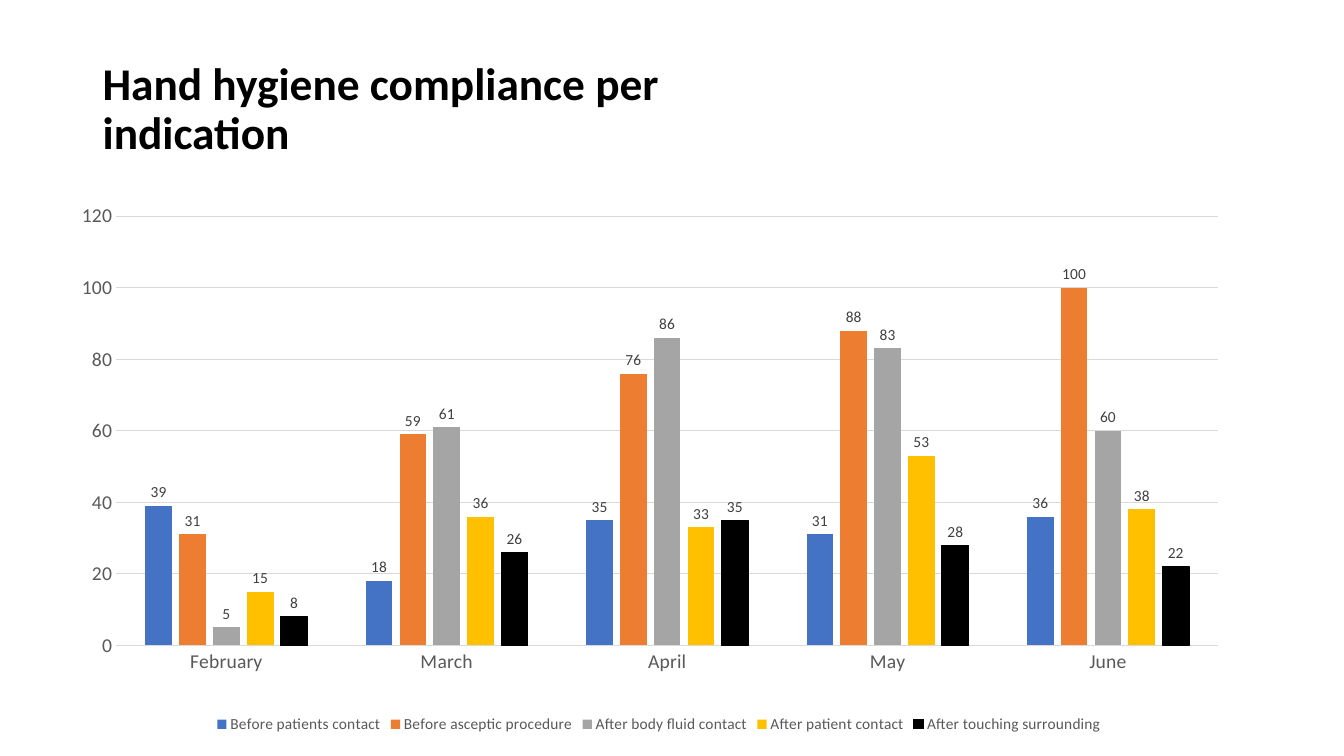
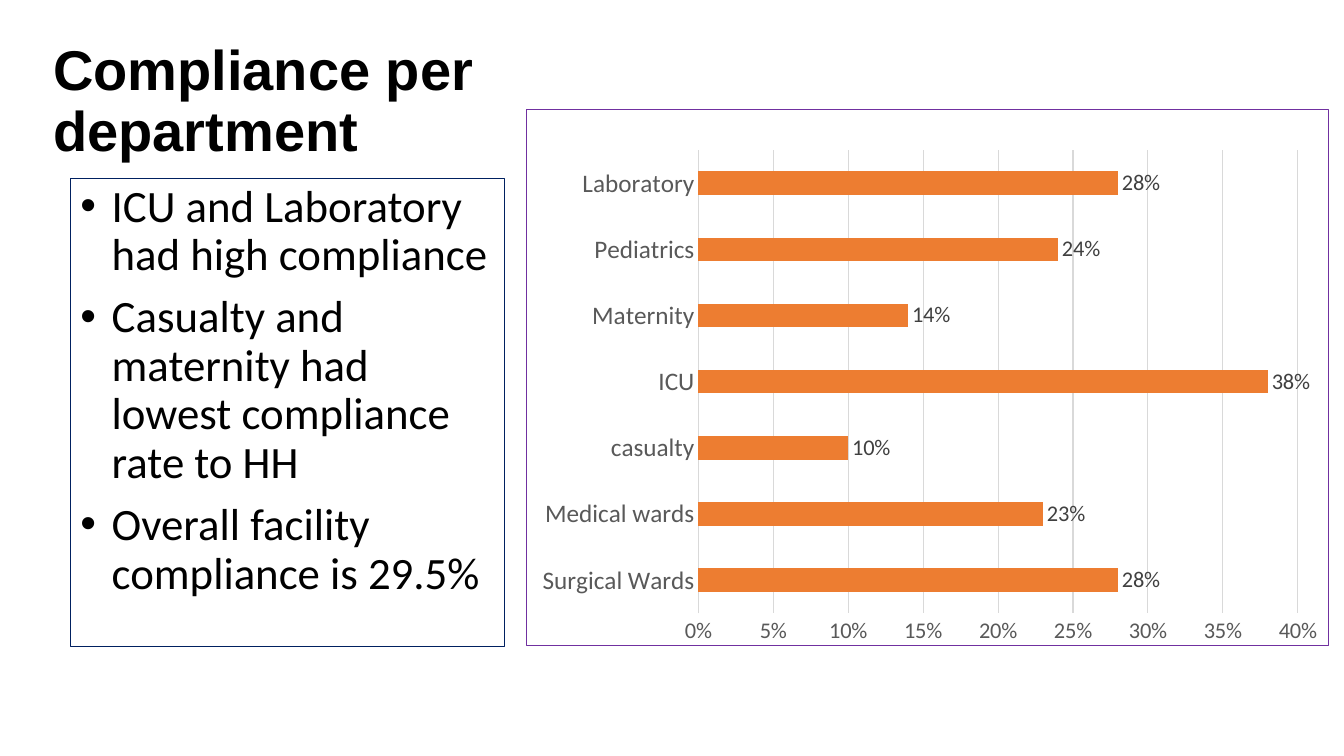
from dataclasses import dataclass

from lxml import etree
from pptx import Presentation
from pptx.chart.data import CategoryChartData
from pptx.dml.color import RGBColor
from pptx.enum import chart as charts, text as texts
from pptx.oxml import parse_xml
from pptx.oxml.ns import nsdecls, qn
from pptx.util import Inches, Pt


@dataclass(frozen=True)
class Theme:
    ink: str = "000000"
    axis_text: str = "595959"
    label_text: str = "404040"
    rule: str = "D9D9D9"
    navy: str = "002060"
    purple: str = "7030A0"
    orange: str = "ED7D31"
    indications: tuple = ("4472C4", "ED7D31", "A5A5A5", "FFC000", "000000")
    body_font: str = "Calibri"
    display_font: str = "Arial"
    hairline: float = 0.75
    body_size: float = 32
    title_small: float = 32.4
    title_large: float = 40


THEME = Theme()

MONTHS = ["February", "March", "April", "May", "June"]
INDICATIONS = {
    "Before patients contact": (39, 18, 35, 31, 36),
    "Before asceptic procedure": (31, 59, 76, 88, 100),
    "After body fluid contact": (5, 61, 86, 83, 60),
    "After patient contact": (15, 36, 33, 53, 38),
    "After touching surrounding": (8, 26, 35, 28, 22),
}
DEPARTMENTS = {
    "Surgical Wards": 0.28,
    "Medical wards": 0.23,
    "casualty": 0.10,
    "ICU": 0.38,
    "Maternity": 0.14,
    "Pediatrics": 0.24,
    "Laboratory": 0.28,
}
FINDINGS = [
    "ICU and Laboratory had high compliance",
    "Casualty and maternity had lowest compliance rate to HH",
    "Overall facility compliance is 29.5%",
]


def inches(box):
    return [Inches(length) for length in box]


def style_font(font, size, color=THEME.ink, name=THEME.body_font, bold=False):
    font.size, font.name, font.bold = Pt(size), name, bold
    font.color.rgb = RGBColor.from_string(color)


def style_line(line, color):
    line.color.rgb = RGBColor.from_string(color)
    line.width = Pt(THEME.hairline)


def add_bullet(paragraph, indent):
    properties = paragraph._p.get_or_add_pPr()
    properties.set("marL", str(Inches(indent)))
    properties.set("indent", str(-Inches(indent)))
    etree.SubElement(properties, qn("a:buFont")).set("typeface", "Arial")
    etree.SubElement(properties, qn("a:buChar")).set("char", "•")


def add_text(slide, box, lines, size, font=THEME.body_font, bold=False,
             anchor=texts.MSO_ANCHOR.TOP, space_before=0, bullet_indent=None,
             outline=None):
    area = slide.shapes.add_textbox(*inches(box))
    if outline:
        style_line(area.line, outline)
    frame = area.text_frame
    frame.word_wrap = True
    frame.vertical_anchor = anchor
    for index, line in enumerate(lines):
        paragraph = frame.paragraphs[0] if index == 0 else frame.add_paragraph()
        paragraph.line_spacing = 0.9
        paragraph.space_before = Pt(space_before)
        if bullet_indent:
            add_bullet(paragraph, bullet_indent)
        run = paragraph.add_run()
        run.text = line
        style_font(run.font, size, name=font, bold=bold)


def add_title(slide, box, title, size, font=THEME.body_font):
    add_text(slide, box, [title], size, font=font, bold=True,
             anchor=texts.MSO_ANCHOR.BOTTOM)


def set_plot_area(chart, x, y, w, h):
    """Fix the inner plot area, in fractions of the chart's box."""
    plot_area = chart._chartSpace.chart.plotArea
    for old in plot_area.findall(qn("c:layout")):
        plot_area.remove(old)
    places = "".join(f'<c:{tag} val="{value}"/>' for tag, value in
                     (("x", x), ("y", y), ("w", w), ("h", h)))
    plot_area.insert(0, parse_xml(
        f'<c:layout {nsdecls("c")}><c:manualLayout>'
        '<c:layoutTarget val="inner"/><c:xMode val="edge"/><c:yMode val="edge"/>'
        f'{places}</c:manualLayout></c:layout>'))


def set_chart_border(chart, color):
    chart._chartSpace.chart.addnext(parse_xml(
        f'<c:spPr {nsdecls("c", "a")}><a:noFill/><a:ln w="{Pt(THEME.hairline)}">'
        f'<a:solidFill><a:srgbClr val="{color}"/></a:solidFill></a:ln></c:spPr>'))


def add_bar_chart(slide, box, kind, categories, series, colors, plot_area, gap,
                  top, step, category_size, value_size, label_size,
                  number_format="General", overlap=0):
    data = CategoryChartData(number_format=number_format)
    data.categories = categories
    for name, values in series.items():
        data.add_series(name, values)
    chart = slide.shapes.add_chart(kind, *inches(box), data).chart
    chart.has_title = chart.has_legend = False
    style_font(chart.font, 10)
    set_plot_area(chart, *plot_area)

    for axis, size in ((chart.category_axis, category_size),
                       (chart.value_axis, value_size)):
        axis.major_tick_mark = axis.minor_tick_mark = charts.XL_TICK_MARK.NONE
        style_font(axis.tick_labels.font, size, THEME.axis_text)
    style_line(chart.category_axis.format.line, THEME.rule)
    scale = chart.value_axis
    scale.minimum_scale, scale.maximum_scale, scale.major_unit = 0, top, step
    scale.format.line.fill.background()
    style_line(scale.major_gridlines.format.line, THEME.rule)
    scale.tick_labels.number_format = number_format
    scale.tick_labels.number_format_is_linked = False

    bars = chart.plots[0]
    bars.gap_width, bars.overlap = gap, overlap
    bars.vary_by_categories = False
    for bar_series, color in zip(bars.series, colors):
        bar_series.invert_if_negative = False
        bar_series.format.fill.solid()
        bar_series.format.fill.fore_color.rgb = RGBColor.from_string(color)
        labels = bar_series.data_labels
        labels.show_value = True
        labels.position = charts.XL_LABEL_POSITION.OUTSIDE_END
        labels.number_format = number_format
        labels.number_format_is_linked = False
        style_font(labels.font, label_size, THEME.label_text)
    return chart


def add_bottom_legend(chart, size):
    chart.has_legend = True
    chart.legend.position = charts.XL_LEGEND_POSITION.BOTTOM
    chart.legend.include_in_layout = False
    style_font(chart.legend.font, size, THEME.axis_text)


def build_indication_slide(slide):
    add_title(slide, (0.92, 0.5, 6.27, 1.13),
              "Hand hygiene compliance per indication", THEME.title_small)
    chart = add_bar_chart(
        slide, (0.62, 1.99, 11.83, 5.33), charts.XL_CHART_TYPE.COLUMN_CLUSTERED,
        MONTHS, INDICATIONS, THEME.indications,
        plot_area=(0.045, 0.029, 0.924, 0.799), gap=219, overlap=-27,
        top=120, step=20, category_size=14, value_size=14, label_size=11)
    style_line(chart.plots[0].series[-1].format.line, THEME.ink)
    add_bottom_legend(chart, 11)


def build_department_slide(slide):
    add_title(slide, (0.43, 0.5, 4.78, 1.17), "Compliance per department",
              THEME.title_large, font=THEME.display_font)
    chart = add_bar_chart(
        slide, (5.22, 1.08, 7.96, 5.33), charts.XL_CHART_TYPE.BAR_CLUSTERED,
        list(DEPARTMENTS), {"Series 1": list(DEPARTMENTS.values())}, [THEME.orange],
        plot_area=(0.214, 0.076, 0.748, 0.864), gap=182, top=0.4, step=0.05,
        category_size=18, value_size=16, label_size=16, number_format="0%")
    set_chart_border(chart, THEME.purple)
    add_text(slide, (0.7, 1.77, 4.3, 4.64), FINDINGS, THEME.body_size,
             space_before=10, bullet_indent=0.31, outline=THEME.navy)


def main():
    deck = Presentation()
    deck.slide_width, deck.slide_height = Inches(13.33), Inches(7.5)
    blank = deck.slide_layouts[6]
    for build in (build_indication_slide, build_department_slide):
        build(deck.slides.add_slide(blank))
    deck.save("out.pptx")


if __name__ == "__main__":
    main()
